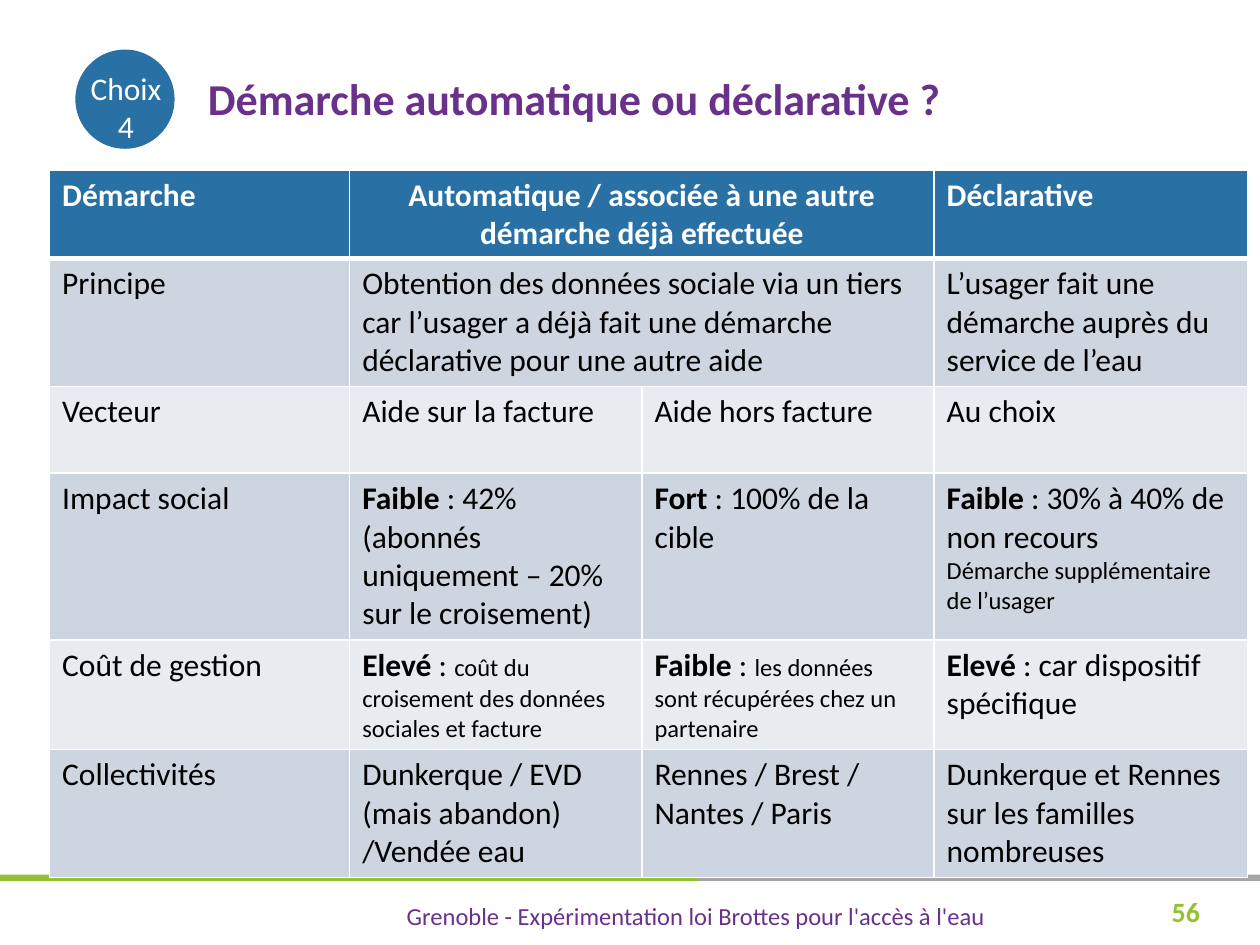
from typing import NamedTuple

from lxml import etree
from pptx import Presentation
from pptx.dml.color import RGBColor
from pptx.enum.shapes import MSO_SHAPE
from pptx.enum.text import MSO_ANCHOR, PP_ALIGN
from pptx.oxml.ns import qn
from pptx.util import Cm, Pt

RECT, OVAL = MSO_SHAPE.RECTANGLE, MSO_SHAPE.OVAL
LEFT, CENTER = PP_ALIGN.LEFT, PP_ALIGN.CENTER
TOP, MIDDLE = MSO_ANCHOR.TOP, MSO_ANCHOR.MIDDLE
FONT = "Calibri"
BLUE, GREEN, GREY, PURPLE = "2970A5", "94C12F", "A6A6A6", "69318B"
WHITE, BLACK, DARK, LIGHT = "FFFFFF", "000000", "CDD5E1", "E8EBF0"
COLS = [6.05, 5.89, 5.89, 6.32]
ROWS = [1.78, 2.58, 1.75, 3.36, 2.21, 2.58]


class Run(NamedTuple):
    text: str
    size: float = 18
    bold: bool = False


class Box(NamedTuple):
    left: float
    top: float
    width: float
    height: float


class Form(NamedTuple):
    kind: MSO_SHAPE
    box: Box
    fill: str


class Label(NamedTuple):
    box: Box
    run: Run
    ink: str
    align: PP_ALIGN = LEFT
    anchor: MSO_ANCHOR = TOP


class Cell(NamedTuple):
    row: int
    col: int
    paras: list[list[Run]]
    span: int = 1


def line(row: int, *texts: str) -> list[Cell]:
    return [Cell(row, col, [[Run(text)]]) for col, text in enumerate(texts)]


def lead(word: str, rest: str, small: str = "") -> list[Run]:
    runs = [Run(word, bold=True), Run(" : " + rest)]
    return runs + [Run(small, 14)] if small else runs


FORMS = [
    Form(RECT, Box(0, 17.63, 15.9, 0.13), GREEN),
    Form(RECT, Box(14.05, 17.63, 11.35, 0.13), GREY),
    Form(OVAL, Box(1.52, 1, 2, 2), BLUE),
]
LABELS = [
    Label(Box(3.94, 1.32, 22.86, 1.3),
          Run("Démarche automatique ou déclarative ?", 25.2, True), PURPLE, anchor=MIDDLE),
    Label(Box(7.95, 18.03, 15.14, 0.91),
          Run("Grenoble - Expérimentation loi Brottes pour l'accès à l'eau", 14), PURPLE),
    Label(Box(23.37, 17.91, 2.03, 1.02), Run("56", 16, True), GREEN),
    Label(Box(1.54, 1.27, 2, 2.03), Run("Choix 4"), WHITE, CENTER),
]
CELLS = [
    Cell(0, 0, [[Run("Démarche", bold=True)]]),
    Cell(0, 1, [[Run("Automatique / associée à une autre démarche déjà effectuée",
                     bold=True)]], 2),
    Cell(0, 3, [[Run("Déclarative", bold=True)]]),
    Cell(1, 0, [[Run("Principe")]]),
    Cell(1, 1, [[Run("Obtention des données sociale via un tiers car l’usager a déjà "
                     "fait une démarche déclarative pour une autre aide")]], 2),
    Cell(1, 3, [[Run("L’usager fait une démarche auprès du service de l’eau")]]),
    *line(2, "Vecteur", "Aide sur la facture", "Aide hors facture", "Au choix"),
    Cell(3, 0, [[Run("Impact social")]]),
    Cell(3, 1, [lead("Faible", "42% (abonnés uniquement – 20% sur le croisement)")]),
    Cell(3, 2, [lead("Fort", "100% de la cible")]),
    Cell(3, 3, [lead("Faible", "30% à 40% de non recours"),
                [Run("Démarche supplémentaire de l’usager", 14)]]),
    Cell(4, 0, [[Run("Coût de gestion")]]),
    Cell(4, 1, [lead("Elevé", "", "coût du croisement des données sociales et facture")]),
    Cell(4, 2, [lead("Faible", "", "les données sont récupérées chez un partenaire")]),
    Cell(4, 3, [lead("Elevé", "car dispositif spécifique")]),
    *line(5, "Collectivités", "Dunkerque / EVD (mais abandon) /Vendée eau",
          "Rennes / Brest / Nantes / Paris",
          "Dunkerque et Rennes sur les familles nombreuses"),
]


def paint(color, code: str) -> None:
    color.rgb = RGBColor.from_string(code)


def flood(item, code: str) -> None:
    item.fill.solid()
    paint(item.fill.fore_color, code)


def write(frame, paras: list[list[Run]], ink: str, align: PP_ALIGN = LEFT) -> None:
    for num, runs in enumerate(paras):
        para = frame.add_paragraph() if num else frame.paragraphs[0]
        para.alignment = align
        for run in runs:
            para.add_run().text = run.text
        parts = para.runs if len(runs) > 1 else [para]
        for part, run in zip(parts, runs):
            font = part.font
            font.name, font.size, font.bold = FONT, Pt(run.size), run.bold
            paint(font.color, ink)


def draw(slide, form: Form) -> None:
    shape = slide.shapes.add_shape(form.kind, *map(Cm, form.box))
    shape.shadow.inherit = False
    flood(shape, form.fill)
    shape.line.fill.background()


def print_label(slide, label: Label) -> None:
    frame = slide.shapes.add_textbox(*map(Cm, label.box)).text_frame
    frame.word_wrap = True
    frame.vertical_anchor = label.anchor
    write(frame, [[label.run]], label.ink, label.align)


def edge(cell, row: int) -> None:
    props = cell._tc.get_or_add_tcPr()
    sides = {"L": 1, "R": 1, "T": 3 if row == 1 else 1, "B": 1 if row else 3}
    for spot, (side, width) in enumerate(sides.items()):
        rule = etree.Element(qn("a:ln" + side), w=str(Pt(width)))
        fill = etree.SubElement(rule, qn("a:solidFill"))
        etree.SubElement(fill, qn("a:srgbClr"), val=WHITE)
        props.insert(spot, rule)


def add_grid(slide) -> None:
    box = Box(1, 3.43, sum(COLS), sum(ROWS))
    table = slide.shapes.add_table(len(ROWS), len(COLS), *map(Cm, box)).table
    for col, width in zip(table.columns, COLS):
        col.width = Cm(width)
    for num, (row, height) in enumerate(zip(table.rows, ROWS)):
        row.height = Cm(height)
        for cell in row.cells:
            flood(cell, (DARK if num % 2 else LIGHT) if num else BLUE)
            edge(cell, num)
    for item in CELLS:
        cell = table.cell(item.row, item.col)
        if item.span > 1:
            cell.merge(table.cell(item.row, item.col + item.span - 1))
        head = item.row == 0
        align = CENTER if head and item.span > 1 else LEFT
        write(cell.text_frame, item.paras, WHITE if head else BLACK, align)


def main() -> None:
    deck = Presentation()
    deck.slide_width, deck.slide_height = Cm(25.4), Cm(19.05)
    slide = deck.slides.add_slide(deck.slide_layouts[6])
    for form in FORMS:
        draw(slide, form)
    for label in LABELS:
        print_label(slide, label)
    add_grid(slide)
    deck.save("out.pptx")


if __name__ == "__main__":
    main()
